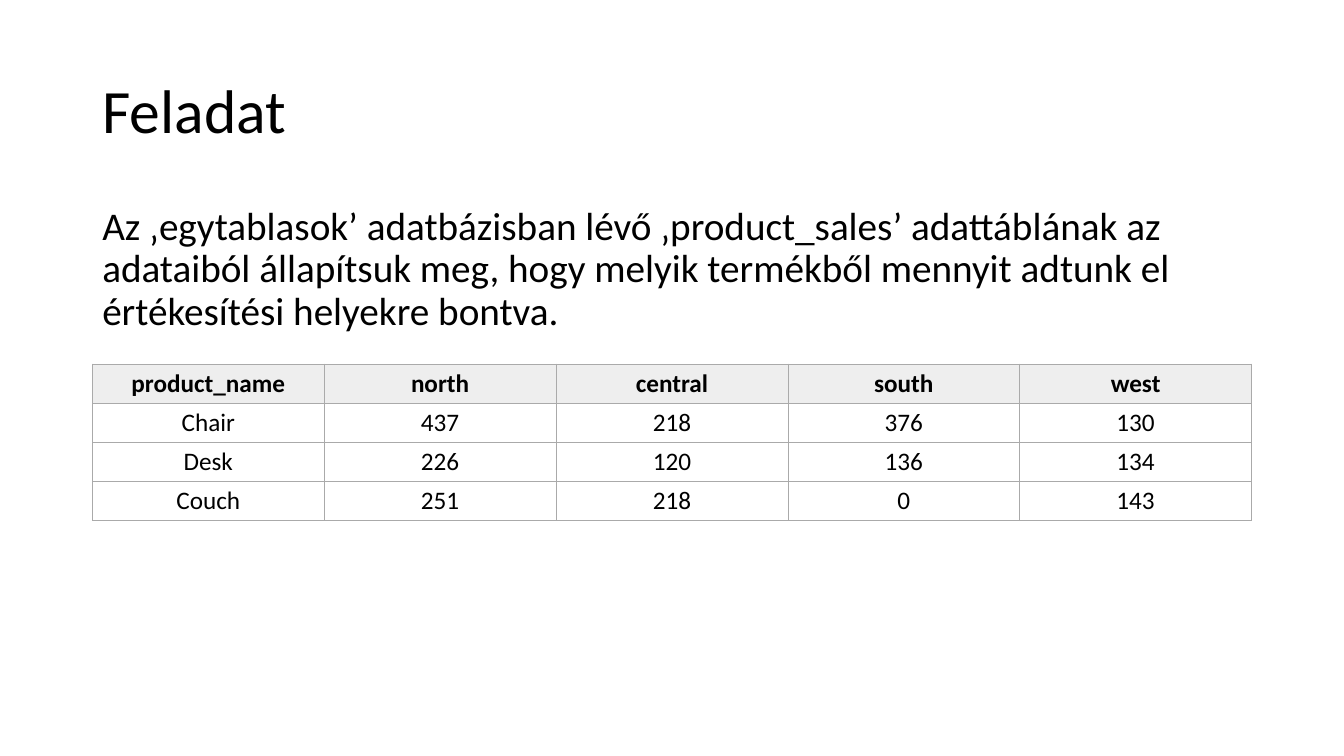
from dataclasses import dataclass

from lxml import etree
from pptx import Presentation
from pptx.dml.color import RGBColor
from pptx.enum.text import MSO_ANCHOR, MSO_AUTO_SIZE, PP_ALIGN
from pptx.oxml.ns import qn
from pptx.util import Pt

LEFT, CENTER = PP_ALIGN.LEFT, PP_ALIGN.CENTER
TOP, MIDDLE = MSO_ANCHOR.TOP, MSO_ANCHOR.MIDDLE
NO_AUTOFIT = MSO_AUTO_SIZE.NONE
TITLE_ONLY = 5


@dataclass(frozen=True)
class Theme:
    """Colours, font and type sizes of the slide."""
    font: str = "Calibri"
    text: str = "000000"
    header_fill: str = "EEEEEE"
    body_fill: str = "FFFFFF"
    border: str = "AAAAAA"
    border_width: float = 0.6
    title_size: int = 44
    body_size: int = 28
    table_size: int = 18


THEME = Theme()
TITLE_BOX = (66, 28.8, 828, 104.4)
TASK_BOX = (66, 144, 828, 342.72)
TABLE_BOX = (66, 259.92, 828, 112)
TASK = ("Az ‚egytablasok’ adatbázisban lévő ‚product_sales’ adattáblának az "
        "adataiból állapítsuk meg, hogy melyik termékből mennyit adtunk el "
        "értékesítési helyekre bontva.")
SALES = (
    ("product_name", "north", "central", "south", "west"),
    ("Chair", 437, 218, 376, 130),
    ("Desk", 226, 120, 136, 134),
    ("Couch", 251, 218, 0, 143),
)


def write_text(text_frame, text, size, alignment, bold=False):
    """Set one paragraph of text and format it."""
    text_frame.text = text
    paragraph = text_frame.paragraphs[0]
    paragraph.alignment = alignment
    font = paragraph.runs[0].font
    font.name, font.size, font.bold = THEME.font, Pt(size), bold
    font.color.rgb = RGBColor.from_string(THEME.text)
    return paragraph


def add_title(slide, box, text):
    """Place the title placeholder in the box."""
    title = slide.shapes.title
    title.left, title.top, title.width, title.height = map(Pt, box)
    frame = title.text_frame
    frame.auto_size, frame.vertical_anchor = NO_AUTOFIT, MIDDLE
    write_text(frame, text, THEME.title_size, LEFT).line_spacing = 0.9


def add_task(slide, box, text):
    """Write the task description in the box."""
    frame = slide.shapes.add_textbox(*map(Pt, box)).text_frame
    frame.word_wrap = True
    frame.auto_size, frame.vertical_anchor = NO_AUTOFIT, TOP
    paragraph = write_text(frame, text, THEME.body_size, LEFT)
    paragraph.line_spacing = 0.9
    paragraph.space_before = Pt(10)


def add_borders(cell):
    """Draw a thin line on all four sides of a cell."""
    properties = cell._tc.get_or_add_tcPr()
    for index, side in enumerate(("lnL", "lnR", "lnT", "lnB")):
        line = etree.Element(qn(f"a:{side}"), w=str(Pt(THEME.border_width)))
        fill = etree.SubElement(line, qn("a:solidFill"))
        etree.SubElement(fill, qn("a:srgbClr"), val=THEME.border)
        properties.insert(index, line)


def add_sales_table(slide, box, rows):
    """Build the sales table with equal rows and columns in the box."""
    table = slide.shapes.add_table(len(rows), len(rows[0]), *map(Pt, box)).table
    table.horz_banding = False
    for row_index, values in enumerate(rows):
        is_header = row_index == 0
        color = THEME.header_fill if is_header else THEME.body_fill
        for column_index, value in enumerate(values):
            cell = table.cell(row_index, column_index)
            cell.vertical_anchor = MIDDLE
            cell.margin_left = cell.margin_right = Pt(3)
            cell.margin_top = cell.margin_bottom = Pt(3)
            cell.fill.solid()
            cell.fill.fore_color.rgb = RGBColor.from_string(color)
            write_text(cell.text_frame, str(value), THEME.table_size, CENTER, is_header)
            add_borders(cell)


def add_task_slide(presentation):
    """Add the slide with title, task and sales table."""
    slide = presentation.slides.add_slide(presentation.slide_layouts[TITLE_ONLY])
    add_title(slide, TITLE_BOX, "Feladat")
    add_task(slide, TASK_BOX, TASK)
    add_sales_table(slide, TABLE_BOX, SALES)


def main():
    """Create and save the presentation."""
    presentation = Presentation()
    presentation.slide_width, presentation.slide_height = Pt(960), Pt(540)
    add_task_slide(presentation)
    presentation.save("out.pptx")


if __name__ == "__main__":
    main()
